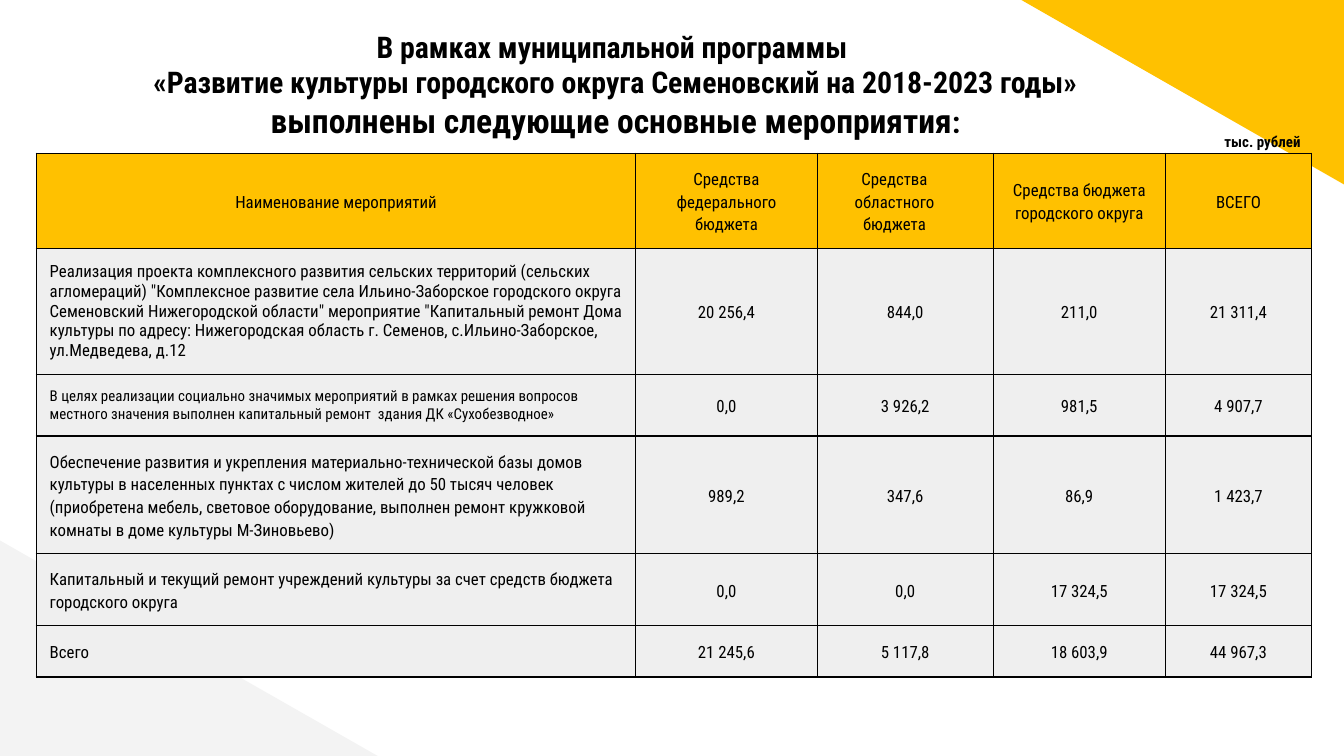
from lxml import etree
from pptx import Presentation
from pptx.dml.color import RGBColor
from pptx.enum.shapes import MSO_SHAPE
from pptx.enum.text import MSO_ANCHOR, MSO_AUTO_SIZE, PP_ALIGN
from pptx.oxml.ns import qn
from pptx.util import Inches, Pt

TRIANGLE = MSO_SHAPE.RIGHT_TRIANGLE
TOP, MIDDLE = MSO_ANCHOR.TOP, MSO_ANCHOR.MIDDLE
LEFT, CENTER = PP_ALIGN.LEFT, PP_ALIGN.CENTER
NO_AUTOFIT = MSO_AUTO_SIZE.NONE
FONT = "Roboto Condensed"
COLORS = {"accent": "FFC100", "corner": "F3F3F3", "body": "EFEFEF", "ink": "000000"}
MARGIN = Inches(0.1)


def write(paragraph, text, size=9, bold=False, align=LEFT, spacing=1.0):
    paragraph.alignment = align
    paragraph.line_spacing = spacing
    run = paragraph.add_run()
    run.text = text
    run.font.name = FONT
    run.font.size = Pt(size)
    run.font.bold = bold
    run.font.color.rgb = RGBColor.from_string(COLORS["ink"])


def add_borders(cell, width=0.75):
    properties = cell._tc.get_or_add_tcPr()
    for side in ("a:lnL", "a:lnR", "a:lnT", "a:lnB"):
        line = etree.SubElement(properties, qn(side), w=str(Pt(width)))
        fill = etree.SubElement(line, qn("a:solidFill"))
        etree.SubElement(fill, qn("a:srgbClr"), val=COLORS["ink"])


presentation = Presentation()
presentation.slide_width = W = Inches(10)
presentation.slide_height = H = W * 9 // 16
slide = presentation.slides.add_slide(presentation.slide_layouts[5])

heading = slide.shapes.title
heading.left, heading.top = Inches(0.15), Inches(0.11)
heading.width, heading.height = Inches(8.86), Inches(0.95)
heading_frame = heading.text_frame
heading_frame.auto_size = NO_AUTOFIT
heading_frame.word_wrap = True
heading_frame.vertical_anchor = TOP
heading_frame.margin_left = heading_frame.margin_right = MARGIN
heading_frame.margin_top = heading_frame.margin_bottom = MARGIN
heading_lines = [
    [("В рамках муниципальной программы ", 16)],
    [("«Развитие культуры городского округа Семеновский на 2018-2023 годы»", 16)],
    [("выполнены следующие основные мероприятия", 18), (":", 16)],
]
heading_paragraph = heading_frame.paragraphs[0]
for number, parts in enumerate(heading_lines):
    if number:
        heading_paragraph.add_line_break()
    for text, size in parts:
        write(heading_paragraph, text, size=size, bold=True, align=CENTER)

corners = [
    (0, 0.715, 0.281, 0.285, 0, "corner"),
    (0.76, 0, 0.24, 0.244, 180, "accent"),
]
for x, y, width, height, rotation, color in corners:
    corner = slide.shapes.add_shape(
        TRIANGLE, int(W * x), int(H * y), int(W * width), int(H * height))
    corner.rotation = rotation
    corner.shadow.inherit = False
    corner.fill.solid()
    corner.fill.fore_color.rgb = RGBColor.from_string(COLORS[color])
    corner.line.fill.background()
    heading.element.addprevious(corner.element)

activities = [
    ("Наименование мероприятий", "Средства федерального бюджета",
     "Средства областного бюджета", "Средства бюджета городского округа", "ВСЕГО"),
    ("Реализация проекта комплексного развития сельских территорий (сельских агломераций) "
     "\"Комплексное развитие села Ильино-Заборское городского округа Семеновский "
     "Нижегородской области\" мероприятие \"Капитальный ремонт Дома культуры по адресу: "
     "Нижегородская область г. Семенов, с.Ильино-Заборское, ул.Медведева, д.12",
     "20 256,4", "844,0", "211,0", "21 311,4"),
    ("В целях реализации социально значимых мероприятий в рамках решения вопросов местного "
     "значения выполнен капитальный ремонт  здания ДК «Сухобезводное»",
     "0,0", "3 926,2", "981,5", "4 907,7"),
    ("Обеспечение развития и укрепления материально-технической базы домов культуры "
     "в населенных пунктах с числом жителей до 50 тысяч человек (приобретена мебель, "
     "световое оборудование, выполнен ремонт кружковой комнаты в доме культуры М-Зиновьево)",
     "989,2", "347,6", "86,9", "1 423,7"),
    ("Капитальный и текущий ремонт учреждений культуры за счет средств бюджета "
     "городского округа", "0,0", "0,0", "17 324,5", "17 324,5"),
    ("Всего", "21 245,6", "5 117,8", "18 603,9", "44 967,3"),
]
column_widths = [4.46, 1.35, 1.31, 1.28, 1.09]
row_heights = [0.71, 0.93, 0.46, 0.87, 0.53, 0.38]
name_formats = {0: {"align": CENTER}, 1: {"spacing": 1.0}, 2: {"spacing": 1.0, "size": 8}}

budget = slide.shapes.add_table(
    len(row_heights), len(column_widths), Inches(0.27), Inches(1.14),
    Inches(sum(column_widths)), Inches(sum(row_heights))).table
budget.first_row = budget.horz_banding = False
for column, width in zip(budget.columns, column_widths):
    column.width = Inches(width)
for row, height in zip(budget.rows, row_heights):
    row.height = Inches(height)

for r, activity in enumerate(activities):
    for c, text in enumerate(activity):
        cell = budget.cell(r, c)
        add_borders(cell)
        cell.fill.solid()
        cell.fill.fore_color.rgb = RGBColor.from_string(COLORS["body" if r else "accent"])
        cell.vertical_anchor = MIDDLE
        cell.margin_left = cell.margin_right = MARGIN
        cell.margin_top = cell.margin_bottom = MARGIN
        text_format = {"align": CENTER} if c else name_formats.get(r, {})
        write(cell.text_frame.paragraphs[0], text, **{"spacing": 1.15, **text_format})
budget.cell(0, 2).margin_right = Inches(0.26)

units = slide.shapes.add_textbox(Inches(9.11), Inches(0.98), Inches(0.85), Inches(0.15))
units_frame = units.text_frame
units_frame.word_wrap = True
units_frame.margin_left = units_frame.margin_right = 0
units_frame.margin_top = Inches(0.01)
units_frame.margin_bottom = 0
write(units_frame.paragraphs[0], "тыс. рублей", size=8, bold=True)

presentation.save("out.pptx")
